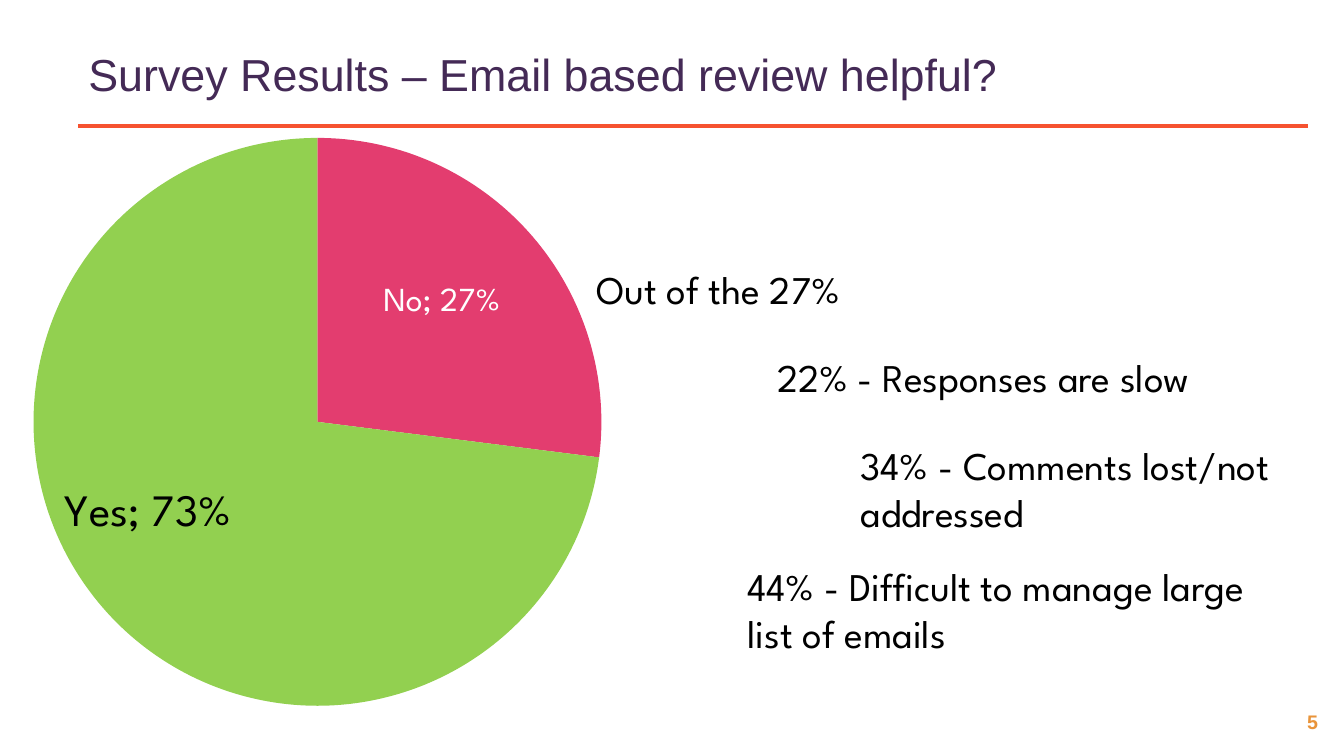
from lxml import etree
from pptx import Presentation
from pptx.chart.data import CategoryChartData
from pptx.dml.color import RGBColor
from pptx.enum.chart import XL_CHART_TYPE as ChartType, XL_LABEL_POSITION as LabelPosition
from pptx.enum.shapes import MSO_CONNECTOR as Connector
from pptx.enum.text import MSO_ANCHOR as Anchor, PP_ALIGN as Align
from pptx.oxml import parse_xml
from pptx.oxml.ns import nsdecls, qn
from pptx.util import Pt


def color(value):
    return RGBColor.from_string(value)


def add_text(text, left, top, width, height, size, font_name, hue):
    box = slide.shapes.add_textbox(Pt(left), Pt(top), Pt(width), Pt(height))
    box.text_frame.word_wrap = True
    paragraph = box.text_frame.paragraphs[0]
    paragraph.text = text
    paragraph.font.size = Pt(size)
    paragraph.font.name = font_name
    paragraph.font.color.rgb = color(hue)
    return box.text_frame


deck = Presentation()
deck.slide_width, deck.slide_height = Pt(960), Pt(540)
slide = deck.slides.add_slide(deck.slide_layouts[6])

page_number = add_text("5", 915, 503.3, 45, 24.5, 14, "Arial", "E9943A")
page_number.paragraphs[0].alignment = Align.CENTER
page_number.paragraphs[0].font.bold = True

title_rule = slide.shapes.add_connector(Connector.STRAIGHT, Pt(56), Pt(90), Pt(934), Pt(90))
title_rule.line.color.rgb = color("F65230")
title_rule.line.width = Pt(2.25)
etree.SubElement(title_rule._element.spPr, qn("a:effectLst"))

title = add_text("Survey Results – Email based review helpful?",
                 56, 25.2, 691, 55.4, 32, "Arial", "442A56")
title.vertical_anchor = Anchor.MIDDLE

answers = CategoryChartData(number_format="0%")
answers.categories = ["No", "Yes"]
answers.add_series("Series 1", [0.27, 0.73])
pie = slide.shapes.add_chart(ChartType.PIE, Pt(-61.2), Pt(90), Pt(640), Pt(427), answers).chart
pie.has_title = False
pie.has_legend = False
pie.font.name = "League Spartan"
pie.font.size = Pt(10)
pie.font.color.rgb = color("000000")

plot_area = pie._chartSpace.chart.plotArea
for layout in plot_area.findall(qn("c:layout")):
    plot_area.remove(layout)
plot_area.insert(0, parse_xml(
    f'<c:layout {nsdecls("c")}><c:manualLayout><c:layoutTarget val="inner"/>'
    '<c:xMode val="edge"/><c:yMode val="edge"/><c:x val="0.13"/><c:y val="0.02"/>'
    '<c:w val="0.64"/><c:h val="0.95"/></c:manualLayout></c:layout>'))

pie.plots[0].vary_by_categories = True
slices = [
    ("E33D6F", "FFFFFF", 24, 0.02, -0.04),
    ("92D050", "000000", 32, -0.07, 0),
]
for index, (fill, label_color, label_size, shift_x, shift_y) in enumerate(slices):
    point = pie.plots[0].series[0].points[index]
    point.format.fill.solid()
    point.format.fill.fore_color.rgb = color(fill)
    label = point.data_label
    label.font.name = "League Spartan"
    label.font.size = Pt(label_size)
    label.font.color.rgb = color(label_color)
    label.position = LabelPosition.CENTER
    label_xml = label._dLbl
    label_xml.find(qn("c:showCatName")).set("val", "1")
    etree.SubElement(label_xml, qn("c:separator")).text = "; "
    label_xml.insert(1, parse_xml(
        f'<c:layout {nsdecls("c")}><c:manualLayout><c:x val="{shift_x}"/>'
        f'<c:y val="{shift_y}"/></c:manualLayout></c:layout>'))

findings = [
    ("Out of the 27%", 419, 185.8, 290, 41),
    ("22% - Responses are slow", 548, 249, 385, 41),
    ("34% - Comments lost/not addressed", 607.7, 311.8, 385, 75),
    ("44% - Difficult to manage large list of emails", 527, 398.2, 385, 75),
]
for finding, left, top, width, height in findings:
    add_text(finding, left, top, width, height, 28, "League Spartan", "000000")

deck.save("out.pptx")
